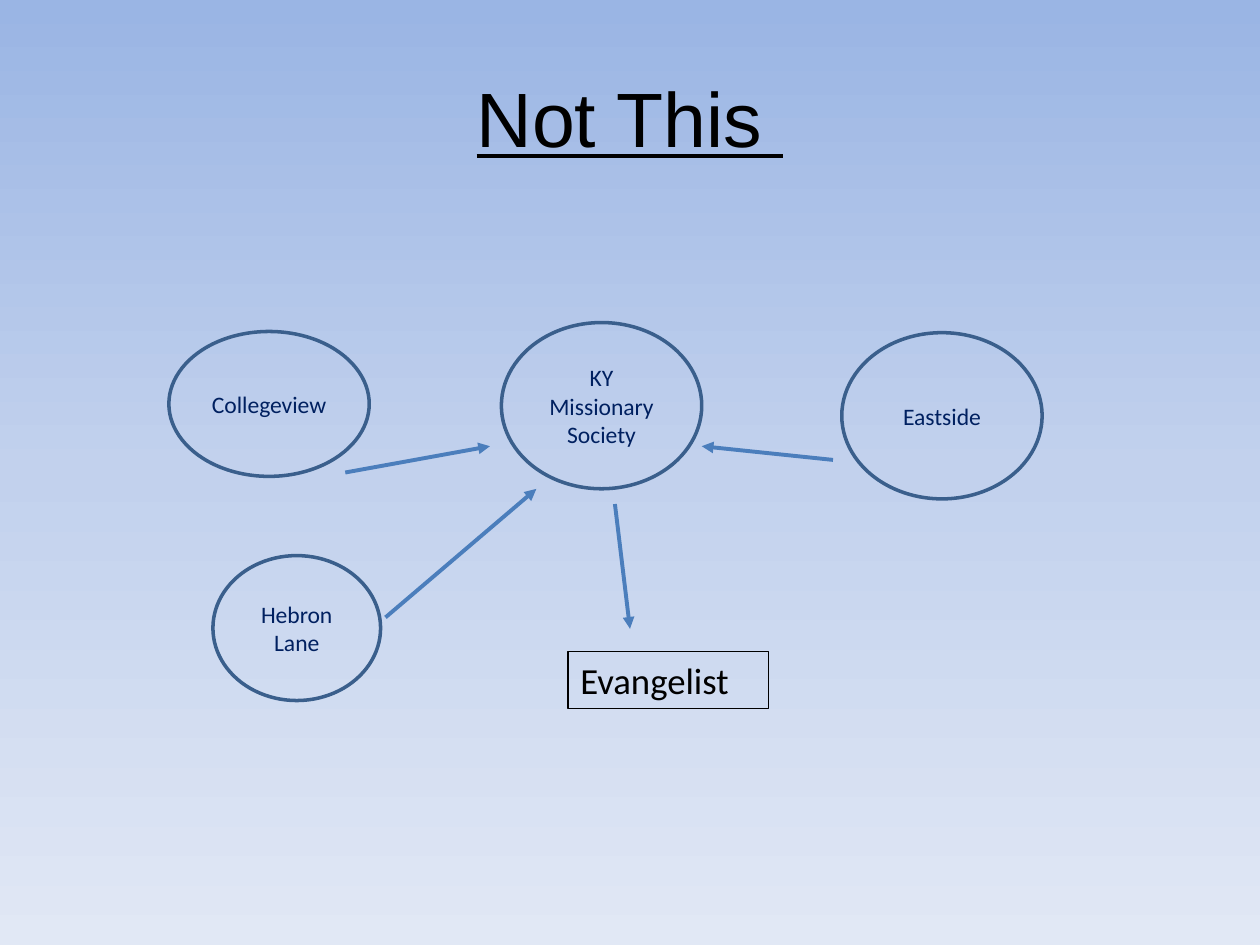
from copy import deepcopy

from lxml.etree import SubElement
from pptx import Presentation
from pptx.dml.color import RGBColor
from pptx.enum.shapes import MSO_CONNECTOR, MSO_SHAPE
from pptx.enum.text import MSO_ANCHOR, MSO_AUTO_SIZE, PP_ALIGN
from pptx.oxml.ns import qn
from pptx.util import Pt

BLACK = RGBColor(0x00, 0x00, 0x00)
NAVY = RGBColor(0x00, 0x20, 0x60)
OUTLINE = RGBColor(0x3A, 0x5F, 0x8C)
ARROW = RGBColor(0x4B, 0x7E, 0xBC)
SKY = [RGBColor(0x9A, 0xB5, 0xE4), RGBColor(0xC2, 0xD1, 0xED), RGBColor(0xE1, 0xE8, 0xF5)]

TITLE = "Not This "
# name, (left, top, width, height) in points
ORGANISATIONS = [
    ("Collegeview", (96.5, 189.4, 114.5, 82.8)),
    ("Hebron Lane", (121.7, 317.5, 95.8, 82.8)),
    ("Eastside", (481, 190.1, 114.5, 95)),
    ("KY Missionary Society", (286.5, 184.3, 114.5, 95)),
]
RECIPIENT = ("Evangelist", (324.5, 372.2, 114.5, 32.7))
# start, end in points
SUPPORT_ARROWS = [
    ((197.3, 270), (280, 255)),
    ((476, 262.8), (401, 255)),
    ((351.4, 288), (360, 359.3)),
    ((220.3, 352.8), (306.5, 279.4)),
]


def points(values):
    return [Pt(value) for value in values]


def add_text(frame, text, font_name, size, color, align):
    paragraph = frame.paragraphs[0]
    paragraph.alignment = align
    run = paragraph.add_run()
    run.text = text
    run.font.name = font_name
    run.font.size = Pt(size)
    run.font.color.rgb = color
    return run


def paint_background(slide):
    """Fill the slide with an even top-to-bottom gradient of the SKY colours."""
    fill = slide.background.fill
    fill.gradient()
    fill.gradient_angle = 270
    stop_list = next(slide.element.iter(qn("a:gsLst")))
    stop_list.insert(1, deepcopy(stop_list[0]))
    for index, (stop, color) in enumerate(zip(fill.gradient_stops, SKY)):
        stop.color.rgb = color
        stop.position = index / (len(SKY) - 1)


def add_title(slide):
    title = slide.shapes.title
    title.left, title.top, title.width, title.height = points((36, 21.6, 648, 90))
    title.text_frame.vertical_anchor = MSO_ANCHOR.MIDDLE
    run = add_text(title.text_frame, TITLE, "Arial", 44, BLACK, PP_ALIGN.CENTER)
    run.font.underline = True


def add_organisation(slide, name, box):
    oval = slide.shapes.add_shape(MSO_SHAPE.OVAL, *points(box))
    oval.shadow.inherit = False
    oval.fill.background()
    oval.line.color.rgb = OUTLINE
    oval.line.width = Pt(2)
    oval.text_frame.word_wrap = True
    oval.text_frame.vertical_anchor = MSO_ANCHOR.MIDDLE
    add_text(oval.text_frame, name, "Calibri", 13.5, NAVY, PP_ALIGN.CENTER)


def add_recipient(slide, name, box):
    label = slide.shapes.add_textbox(*points(box))
    label.line.color.rgb = BLACK
    label.line.width = Pt(0.75)
    label.text_frame.word_wrap = True
    label.text_frame.auto_size = MSO_AUTO_SIZE.SHAPE_TO_FIT_TEXT
    add_text(label.text_frame, name, "Calibri", 21, BLACK, PP_ALIGN.LEFT)


def add_arrow(slide, start, end):
    arrow = slide.shapes.add_connector(MSO_CONNECTOR.STRAIGHT, *points(start + end))
    arrow.line.color.rgb = ARROW
    arrow.line.width = Pt(2.25)
    SubElement(arrow.line._get_or_add_ln(), qn("a:tailEnd"), type="triangle")
    SubElement(arrow._element.spPr, qn("a:effectLst"))


def main():
    presentation = Presentation()
    presentation.slide_width, presentation.slide_height = Pt(720), Pt(540)
    slide = presentation.slides.add_slide(presentation.slide_layouts[5])
    paint_background(slide)
    add_title(slide)
    for name, box in ORGANISATIONS:
        add_organisation(slide, name, box)
    add_recipient(slide, *RECIPIENT)
    for start, end in SUPPORT_ARROWS:
        add_arrow(slide, start, end)
    presentation.save("out.pptx")


if __name__ == "__main__":
    main()
